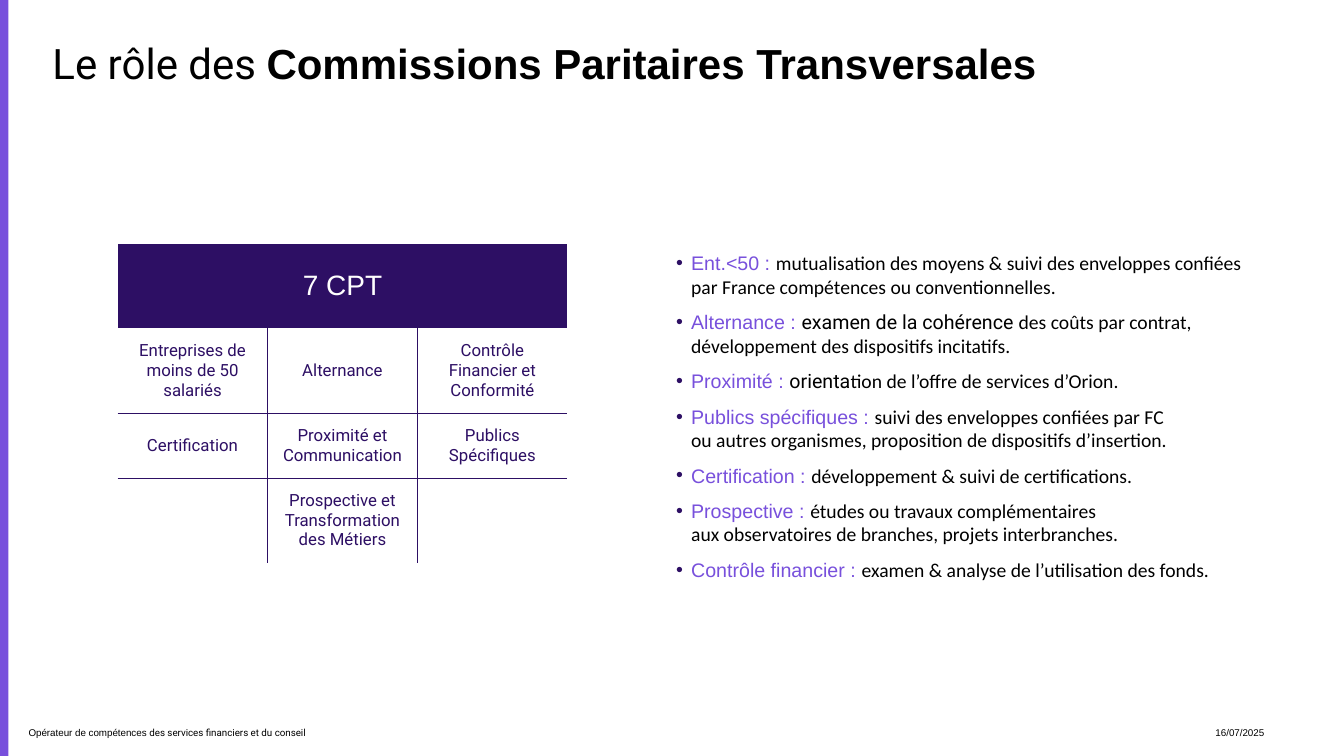
"""Build the slide on the role of the seven joint commissions."""
import copy
from dataclasses import dataclass

import lxml.etree
import pptx
import pptx.dml.color
import pptx.enum.shapes
import pptx.enum.text
import pptx.oxml.ns
import pptx.util

WIDTH = pptx.util.Inches(13.33)
HEIGHT = pptx.util.Inches(7.5)
COLUMNS, ROWS = 160, 90
ALIGN = pptx.enum.text.PP_ALIGN
ANCHOR = pptx.enum.text.MSO_ANCHOR
PLAIN_TABLE = "{2D5ABB26-0587-4C30-8999-92F81FD0307C}"


@dataclass(frozen=True)
class Theme:
    """Hold the colours, fonts and type sizes of the slide."""

    navy: str = "2D0F64"
    violet: str = "7850DC"
    black: str = "000000"
    white: str = "FFFFFF"
    sans: str = "Arial"
    light: str = "Roboto"
    body: str = "Calibri"
    title_size: int = 30
    header_size: int = 20
    text_size: int = 14
    cell_size: int = 12
    footer_size: int = 7


THEME = Theme()
COMMISSIONS = [
    ["Entreprises de moins de 50 salariés", "Alternance", "Contrôle Financier et Conformité"],
    ["Certification", "Proximité et Communication", "Publics Spécifiques"],
    ["", "Prospective et Transformation des Métiers", ""],
]
ROW_HEIGHTS = [10.1, 10.1, 7.7, 10.1]
COMMISSION_WIDTH = 17.85
ROLES = [
    ("Ent.<50 : ", "", "mutualisation des moyens & suivi des enveloppes confiées "
     "par France compétences ou conventionnelles."),
    ("Alternance : ", "examen de la cohérence ",
     "des coûts par contrat, développement des dispositifs incitatifs."),
    ("Proximité : ", "orienta", "tion de l’offre de services d’Orion."),
    ("Publics spécifiques : ", "", "suivi des enveloppes confiées par FC\n"
     "ou autres organismes, proposition de dispositifs d’insertion."),
    ("Certification : ", "", "développement & suivi de certifications."),
    ("Prospective : ", "", "études ou travaux complémentaires\n"
     "aux observatoires de branches, projets interbranches."),
    ("Contrôle financier : ", "", "examen & analyse de l’utilisation des fonds."),
]


def across(columns):
    """Convert grid columns to a length."""
    return round(WIDTH * columns / COLUMNS)


def down(rows):
    """Convert grid rows to a length."""
    return round(HEIGHT * rows / ROWS)


def place(left, top, width, height):
    """Convert a grid area to slide lengths."""
    return across(left), down(top), across(width), down(height)


def colour(value):
    """Return a colour object for a hexadecimal value."""
    return pptx.dml.color.RGBColor.from_string(value)


def add_child(parent, tag, **attributes):
    """Append a drawing element with its attributes."""
    child = lxml.etree.SubElement(parent, pptx.oxml.ns.qn(tag))
    for name, value in attributes.items():
        child.set(name, str(value))
    return child


def write(paragraph, text, font=THEME.body, size=THEME.text_size,
          fill=THEME.black, bold=False, align=None):
    """Write formatted text in a paragraph, with a line break at each newline."""
    if align is not None:
        paragraph.alignment = align
    for number, line in enumerate(text.split("\n")):
        if number:
            paragraph.add_line_break()
            paragraph._p[-1].append(copy.deepcopy(run._r.rPr))
        run = paragraph.add_run()
        run.text = line
        run.font.name = font
        run.font.size = pptx.util.Pt(size)
        run.font.bold = bold
        run.font.color.rgb = colour(fill)


def set_margins(target, left, top, right, bottom):
    """Set the inner margins of a frame or cell, in inches."""
    target.margin_left = pptx.util.Inches(left)
    target.margin_top = pptx.util.Inches(top)
    target.margin_right = pptx.util.Inches(right)
    target.margin_bottom = pptx.util.Inches(bottom)


def add_text_frame(slide, area, margins=(0.1, 0.05, 0.1, 0.05), anchor=ANCHOR.TOP):
    """Add a wrapping text box and return its frame."""
    frame = slide.shapes.add_textbox(*place(*area)).text_frame
    frame.word_wrap = True
    frame.vertical_anchor = anchor
    set_margins(frame, *margins)
    return frame


def add_side_bar(slide):
    """Add the violet band along the left edge."""
    shape = slide.shapes.add_shape(
        pptx.enum.shapes.MSO_SHAPE.RECTANGLE, *place(0, 0, 1, ROWS))
    shape.shadow.inherit = False
    shape.fill.solid()
    shape.fill.fore_color.rgb = colour(THEME.violet)
    shape.line.fill.background()


def add_title(slide):
    """Add the two-weight title."""
    paragraph = add_text_frame(slide, (6.25, 4.45, 128.6, 6), (0, 0, 0, 0)).paragraphs[0]
    write(paragraph, "Le rôle des ", THEME.light, THEME.title_size)
    write(paragraph, "Commissions Paritaires Transversales",
          THEME.sans, THEME.title_size, bold=True)


def add_borders(cell, sides):
    """Draw thin borders on the given sides, listed in L, R, T, B order."""
    properties = cell._tc.get_or_add_tcPr()
    for position, side in enumerate(sides):
        line = add_child(properties, "a:ln" + side, w=pptx.util.Pt(0.5))
        add_child(add_child(line, "a:solidFill"), "a:srgbClr", val=THEME.navy)
        properties.insert(position, line)


def add_commission_table(slide):
    """Add the table of commissions under its merged heading."""
    count = len(COMMISSIONS[0])
    area = place(14, 29, COMMISSION_WIDTH * count, sum(ROW_HEIGHTS))
    table = slide.shapes.add_table(len(ROW_HEIGHTS), count, *area).table
    table.first_row = table.horz_banding = False
    table._tbl.tblPr.find(pptx.oxml.ns.qn("a:tableStyleId")).text = PLAIN_TABLE
    for column in table.columns:
        column.width = across(COMMISSION_WIDTH)
    for row, height in zip(table.rows, ROW_HEIGHTS):
        row.height = down(height)
    header = table.cell(0, 0)
    header.merge(table.cell(0, count - 1))
    header.vertical_anchor = ANCHOR.MIDDLE
    header.fill.solid()
    header.fill.fore_color.rgb = colour(THEME.navy)
    write(header.text_frame.paragraphs[0], "7 CPT", THEME.sans,
          THEME.header_size, THEME.white, align=ALIGN.CENTER)
    for row, names in enumerate(COMMISSIONS):
        for column, name in enumerate(names):
            cell = table.cell(row + 1, column)
            cell.fill.background()
            cell.vertical_anchor = ANCHOR.MIDDLE
            set_margins(cell, 0.12, 0.12, 0.12, 0.12)
            inner = {"L": column > 0, "R": column < count - 1,
                     "T": row > 0, "B": row < len(COMMISSIONS) - 1}
            add_borders(cell, [side for side, shown in inner.items() if shown])
            if name:
                write(cell.text_frame.paragraphs[0], name, THEME.light,
                      THEME.cell_size, THEME.navy, align=ALIGN.CENTER)


def add_bullet(paragraph):
    """Give a paragraph a hanging navy bullet."""
    properties = paragraph._p.get_or_add_pPr()
    indent = pptx.util.Inches(0.15)
    properties.set("marL", str(indent))
    properties.set("indent", str(-indent))
    add_child(add_child(properties, "a:buClr"), "a:srgbClr", val=THEME.navy)
    add_child(properties, "a:buFont", typeface=THEME.sans)
    add_child(properties, "a:buChar", char="•")


def add_roles(slide):
    """Add the bulleted list of each commission's role."""
    frame = add_text_frame(slide, (79.3, 29.3, 73, 40.8))
    for number, (label, opening, description) in enumerate(ROLES):
        paragraph = frame.add_paragraph() if number else frame.paragraphs[0]
        add_bullet(paragraph)
        if number:
            paragraph.space_before = pptx.util.Pt(8.5)
        write(paragraph, label, THEME.sans, fill=THEME.violet)
        if opening:
            write(paragraph, opening, THEME.light)
        write(paragraph, description)


def add_footer(slide, left, width, parts, align=ALIGN.LEFT):
    """Add a footer line made of text and font pairs."""
    frame = add_text_frame(slide, (left, 85.2, width, 4), (0.2, 0, 0, 0), ANCHOR.MIDDLE)
    for text, font in parts:
        write(frame.paragraphs[0], text, font, THEME.footer_size, align=align)


def main():
    """Build and save the presentation."""
    presentation = pptx.Presentation()
    presentation.slide_width, presentation.slide_height = WIDTH, HEIGHT
    slide = presentation.slides.add_slide(presentation.slide_layouts[6])
    add_side_bar(slide)
    add_title(slide)
    add_commission_table(slide)
    add_roles(slide)
    add_footer(slide, 1, 84.2, [("Opérateur de compétences ", THEME.sans),
                                ("des services financiers et du conseil", THEME.light)])
    add_footer(slide, 138.5, 12, [("16/07/2025", THEME.sans)], ALIGN.RIGHT)
    presentation.save("out.pptx")


if __name__ == "__main__":
    main()
